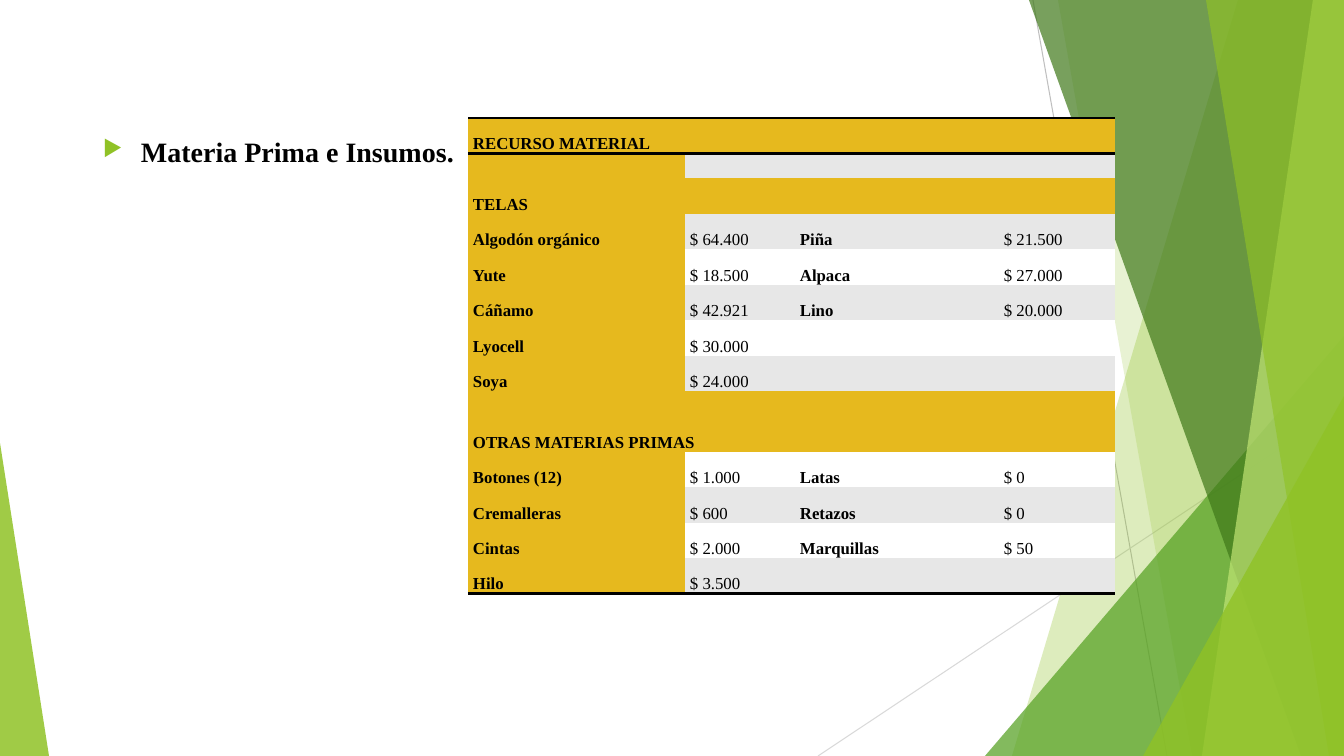
"""Build the slide that lists raw materials and supplies with their prices."""
from dataclasses import dataclass
from typing import Any

import lxml.etree
import pptx
import pptx.dml.color
import pptx.enum.shapes
import pptx.enum.text
import pptx.oxml.ns
import pptx.util

RGBColor = pptx.dml.color.RGBColor
qn = pptx.oxml.ns.qn

WIDTH, HEIGHT = 1344, 756
SCALE = 12192000 / WIDTH

BLACK = RGBColor(0x00, 0x00, 0x00)
WHITE = RGBColor(0xFF, 0xFF, 0xFF)
SILVER = RGBColor(0xBF, 0xBF, 0xBF)
PALE_GREY = RGBColor(0xD9, 0xD9, 0xD9)
ROW_GREY = RGBColor(0xE7, 0xE7, 0xE7)
GOLD = RGBColor(0xE6, 0xB9, 0x1E)
LIME = RGBColor(0x90, 0xC2, 0x26)
LEAF = RGBColor(0x54, 0xA0, 0x21)
FOREST = RGBColor(0x3F, 0x78, 0x19)
LIGHT_LIME = RGBColor(0xC0, 0xE4, 0x74)

FONT = "Times New Roman"
NO_STYLE = "{2D5ABB26-0587-4C30-8999-92F81FD0307C}"


@dataclass
class Ray:
    x1: int
    y1: int
    x2: int
    y2: int
    color: RGBColor


@dataclass
class Band:
    top_x: int
    bottom_x: int
    color: RGBColor
    opacity: int


@dataclass
class Triangle:
    left: int
    top: int
    width: int
    apex: float
    color: RGBColor
    opacity: int


RAYS = [
    Ray(1033, 0, 1167, HEIGHT, SILVER),
    Ray(WIDTH, 406, 818, HEIGHT, PALE_GREY),
]
FACETS = [
    Band(1238, 1012, LIME, 30),
    Band(1058, 1192, LIME, 20),
    Triangle(985, 336, 359, 1, LEAF, 72),
    Band(1029, 1301, FOREST, 70),
    Band(1313, 1202, LIGHT_LIME, 70),
    Band(1206, 1329, LIME, 65),
    Triangle(1143, 396, 201, 1, LIME, 80),
    Triangle(0, 443, 49, 0, LIME, 85),
]

COLUMNS = [217, 110, 204, 116]
TABLE_LEFT, TABLE_TOP, TABLE_HEIGHT = 468, 118, 476
SPACER_HEIGHT = 25
ROWS = [
    ("RECURSO MATERIAL",),
    ("", "", "", ""),
    ("TELAS",),
    ("Algodón orgánico", "$ 64.400", "Piña", "$ 21.500"),
    ("Yute", "$ 18.500", "Alpaca", "$ 27.000"),
    ("Cáñamo", "$ 42.921", "Lino", "$ 20.000"),
    ("Lyocell", "$ 30.000", ""),
    ("Soya", "$ 24.000", ""),
    ("",),
    ("OTRAS MATERIAS PRIMAS",),
    ("Botones (12)", "$ 1.000", "Latas", "$ 0"),
    ("Cremalleras", "$ 600", "Retazos", "$ 0"),
    ("Cintas", "$ 2.000", "Marquillas", "$ 50"),
    ("Hilo", "$ 3.500", "", ""),
]
RULES = {0: ("a:lnB", "a:lnT"), len(ROWS) - 1: ("a:lnB",)}


def px(n: float) -> pptx.util.Emu:
    """Turn pixels into EMU."""
    return pptx.util.Emu(round(n * SCALE))


def apply(target: Any, values: dict[str, Any]) -> None:
    """Set each named attribute on the target."""
    for name, value in values.items():
        setattr(target, name, value)


def sub(parent: Any, tag: str, **attrs: str) -> Any:
    """Append a child element with the given attributes."""
    return lxml.etree.SubElement(parent, qn(tag), attrs)


def add_run(p: Any, text: str, size: int, bold: bool) -> None:
    """Add a black run to a paragraph."""
    r = p.add_run()
    r.text = text
    apply(r.font, {"name": FONT, "size": pptx.util.Pt(size), "bold": bold})
    r.font.color.rgb = BLACK


def draw_ray(shapes: Any, ray: Ray) -> None:
    """Draw a thin background line."""
    s = shapes.add_connector(pptx.enum.shapes.MSO_CONNECTOR.STRAIGHT,
                             px(ray.x1), px(ray.y1), px(ray.x2), px(ray.y2))
    s.line.color.rgb = ray.color
    s.line.width = pptx.util.Pt(0.75)
    sub(s.element.find(qn("p:spPr")), "a:effectLst")


def add_band(shapes: Any, band: Band) -> Any:
    """Add a full-height band that reaches the right edge."""
    points = [(WIDTH, 0), (WIDTH, HEIGHT), (band.bottom_x, HEIGHT)]
    builder = shapes.build_freeform(px(band.top_x), 0)
    builder.add_line_segments([(px(x), px(y)) for x, y in points])
    return builder.convert_to_shape()


def add_triangle(shapes: Any, tri: Triangle) -> Any:
    """Add a triangle that stands on the bottom edge."""
    s = shapes.add_shape(pptx.enum.shapes.MSO_SHAPE.ISOSCELES_TRIANGLE, px(tri.left),
                         px(tri.top), px(tri.width), px(HEIGHT - tri.top))
    s.adjustments[0] = tri.apex
    return s


def draw_facet(shapes: Any, facet: Band | Triangle) -> None:
    """Draw a translucent background facet."""
    add = add_band if isinstance(facet, Band) else add_triangle
    s = add(shapes, facet)
    s.shadow.inherit = False
    s.line.fill.background()
    s.fill.solid()
    s.fill.fore_color.rgb = facet.color
    color = s.element.find(qn("p:spPr")).find(qn("a:solidFill"))[0]
    sub(color, "a:alpha", val=str(facet.opacity * 1000))


def draw_heading(shapes: Any) -> None:
    """Draw the bulleted heading."""
    s = shapes.add_textbox(px(93), px(130), px(375), px(42))
    tf = s.text_frame
    apply(tf, {"word_wrap": True, "margin_right": 0})
    p = tf.paragraphs[0]
    add_run(p, "Materia Prima e Insumos.", 20, True)
    ppr = p._p.get_or_add_pPr()
    ppr.set("marL", str(px(38)))
    ppr.set("indent", str(px(-38)))
    sub(sub(ppr, "a:buClr"), "a:srgbClr", val=str(LIME))
    sub(ppr, "a:buSzPct", val="80000")
    sub(ppr, "a:buChar", char="▶")


def fill_cell(cell: Any, text: str, color: RGBColor, bold: bool) -> None:
    """Write and colour one table cell."""
    apply(cell, {"margin_left": px(5), "margin_right": px(5), "margin_top": 0,
                 "margin_bottom": 0,
                 "vertical_anchor": pptx.enum.text.MSO_ANCHOR.BOTTOM})
    cell.fill.solid()
    cell.fill.fore_color.rgb = color
    p = cell.text_frame.paragraphs[0]
    if text:
        p.line_spacing = 1.5
        add_run(p, text, 12, bold)
    else:
        sub(p._p, "a:endParaRPr", sz="1200")


def rule_cell(cell: Any, tag: str) -> None:
    """Draw one black border of a cell."""
    ln = lxml.etree.Element(qn(tag), {"w": str(pptx.util.Pt(2))})
    sub(sub(ln, "a:solidFill"), "a:srgbClr", val=str(BLACK))
    cell._tc.get_or_add_tcPr().insert(0, ln)


def draw_table(shapes: Any) -> None:
    """Draw the price table."""
    s = shapes.add_table(len(ROWS), len(COLUMNS), px(TABLE_LEFT), px(TABLE_TOP),
                         px(sum(COLUMNS)), px(TABLE_HEIGHT))
    table = s.table
    apply(table, {"first_row": False, "horz_banding": False})
    s.element.find(".//" + qn("a:tableStyleId")).text = NO_STYLE
    for column, width in zip(table.columns, COLUMNS):
        column.width = px(width)
    spacers = sum(not any(row) for row in ROWS)
    row_height = (TABLE_HEIGHT - spacers * SPACER_HEIGHT) / (len(ROWS) - spacers)
    last = len(COLUMNS) - 1
    for i, row in enumerate(ROWS):
        table.rows[i].height = px(row_height if any(row) else SPACER_HEIGHT)
        band = ROW_GREY if i % 2 else WHITE
        for j in range(len(COLUMNS)):
            cell = table.cell(i, j)
            gold = j == 0 or len(row) == 1
            fill_cell(cell, row[j] if j < len(row) else "", GOLD if gold else band, j % 2 == 0)
            for tag in RULES.get(i, ()):
                rule_cell(cell, tag)
        if len(row) <= last:
            table.cell(i, len(row) - 1).merge(table.cell(i, last))


def main() -> None:
    """Build and save the slide."""
    prs = pptx.Presentation()
    apply(prs, {"slide_width": px(WIDTH), "slide_height": px(HEIGHT)})
    shapes = prs.slides.add_slide(prs.slide_layouts[6]).shapes
    for ray in RAYS:
        draw_ray(shapes, ray)
    for facet in FACETS:
        draw_facet(shapes, facet)
    draw_heading(shapes)
    draw_table(shapes)
    prs.save("out.pptx")


if __name__ == "__main__":
    main()
